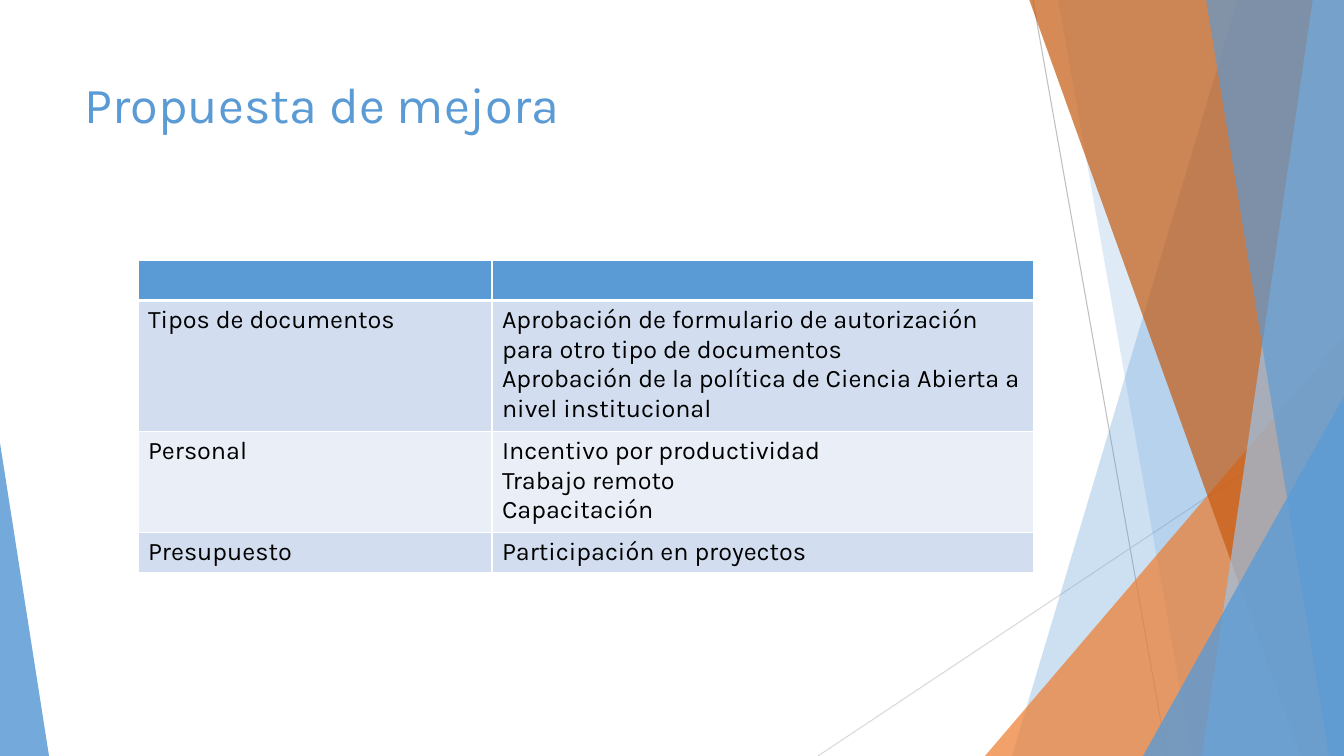
"""Builds the "Propuesta de mejora" slide: a faceted backdrop, a title and a table."""
from lxml import etree
from pptx import Presentation, util as u
from pptx.dml.color import RGBColor
from pptx.enum import shapes, text
from pptx.oxml.ns import qn

W, H = 1344, 756
PX = 914400 / 100.8
FONT = "Karla"
BLUE, ORANGE, WHITE, BLACK = "5B9BD5", "ED7D31", "FFFFFF", "000000"

TITLE = "Propuesta de mejora"
ROWS = [
    ("", ""),
    ("Tipos de documentos",
     "Aprobación de formulario de autorización para otro tipo de documentos\n"
     "Aprobación de la política de Ciencia Abierta a nivel institucional"),
    ("Personal", "Incentivo por productividad\nTrabajo remoto\nCapacitación"),
    ("Presupuesto", "Participación en proyectos"),
]
ROW_FILLS = [BLUE, "D2DEEF", "EAEFF7", "D2DEEF"]
ROW_HEIGHTS = [40, 129, 99, 40]
COL_WIDTHS = [354, 542]
TABLE_LEFT, TABLE_TOP = 138, 260

LINES = [((1033, 0), (1167, H), "BFBFBF"), ((W, 406), (818, H), "D9D9D9")]
FACETS = [
    ("band", 1238, 1012, BLUE, 30),
    ("band", 1058, 1192, BLUE, 20),
    ("triangle", 985, 336, 359, 1, ORANGE, 72),
    ("band", 1029, 1301, "C55A11", 70),
    ("band", 1313, 1202, "9DC3E6", 70),
    ("band", 1206, 1329, BLUE, 65),
    ("triangle", 1143, 396, 201, 1, BLUE, 80),
    ("triangle", 0, 443, 49, 0, BLUE, 85),
]


def px(n):
    return u.Emu(round(n * PX))


def rgb(color):
    return RGBColor.from_string(color)


def write(tf, content, size=18, color=BLACK):
    tf.word_wrap = True
    for i, line in enumerate(content.split("\n")):
        p = tf.paragraphs[0] if i == 0 else tf.add_paragraph()
        p.font.size = u.Pt(size)
        if line:
            r = p.add_run()
            r.text = line
            r.font.name, r.font.size = FONT, u.Pt(size)
            r.font.color.rgb = rgb(color)


def paint(sp, color, opacity):
    sp.shadow.inherit = False
    sp.line.fill.background()
    sp.fill.solid()
    sp.fill.fore_color.rgb = rgb(color)
    clr = sp.fill._xPr.find(".//" + qn("a:srgbClr"))
    etree.SubElement(clr, qn("a:alpha"), val=str(opacity * 1000))


def band(s, top_x, bottom_x, color, opacity):
    fb = s.shapes.build_freeform(top_x, -1, scale=PX)
    fb.add_line_segments([(W, -1), (W, H), (bottom_x, H)], close=True)
    paint(fb.convert_to_shape(), color, opacity)


def triangle(s, left, top, width, apex, color, opacity):
    sp = s.shapes.add_shape(shapes.MSO_SHAPE.ISOSCELES_TRIANGLE,
                            px(left), px(top), px(width), px(H - top))
    sp.adjustments[0] = apex
    paint(sp, color, opacity)


def line(s, start, end, color):
    c = s.shapes.add_connector(shapes.MSO_CONNECTOR.STRAIGHT, *map(px, start + end))
    c.line.color.rgb, c.line.width = rgb(color), u.Pt(0.75)
    etree.SubElement(c._element.spPr, qn("a:effectLst"))


def borders(cell, bottom):
    tcPr = cell._tc.get_or_add_tcPr()
    for i, (side, width) in enumerate(zip("LRTB", (1, 1, 1, bottom))):
        ln = etree.Element(qn(f"a:ln{side}"), w=str(u.Pt(width)))
        fill = etree.SubElement(ln, qn("a:solidFill"))
        etree.SubElement(fill, qn("a:srgbClr"), val=WHITE)
        tcPr.insert(i, ln)


def table(s):
    t = s.shapes.add_table(len(ROWS), len(COL_WIDTHS), px(TABLE_LEFT), px(TABLE_TOP),
                           px(sum(COL_WIDTHS)), px(sum(ROW_HEIGHTS))).table
    for col, width in zip(t.columns, COL_WIDTHS):
        col.width = px(width)
    for i, (row, height) in enumerate(zip(t.rows, ROW_HEIGHTS)):
        row.height = px(height)
        for cell, content in zip(row.cells, ROWS[i]):
            cell.fill.solid()
            cell.fill.fore_color.rgb = rgb(ROW_FILLS[i])
            borders(cell, 3 if i == 0 else 1)
            if i == 1:
                cell._tc.tcPr.find(qn("a:lnT")).set("w", str(u.Pt(3)))
            write(cell.text_frame, content)


def main():
    prs = Presentation()
    prs.slide_width, prs.slide_height = px(W), px(H)
    s = prs.slides.add_slide(prs.slide_layouts[6])
    for args in LINES:
        line(s, *args)
    draw = {"band": band, "triangle": triangle}
    for kind, *args in FACETS:
        draw[kind](s, *args)
    title = s.shapes.add_textbox(px(75), px(68), px(948), px(145))
    title.text_frame.vertical_anchor = text.MSO_ANCHOR.TOP
    write(title.text_frame, TITLE, size=36, color=BLUE)
    table(s)
    prs.save("out.pptx")


if __name__ == "__main__":
    main()
